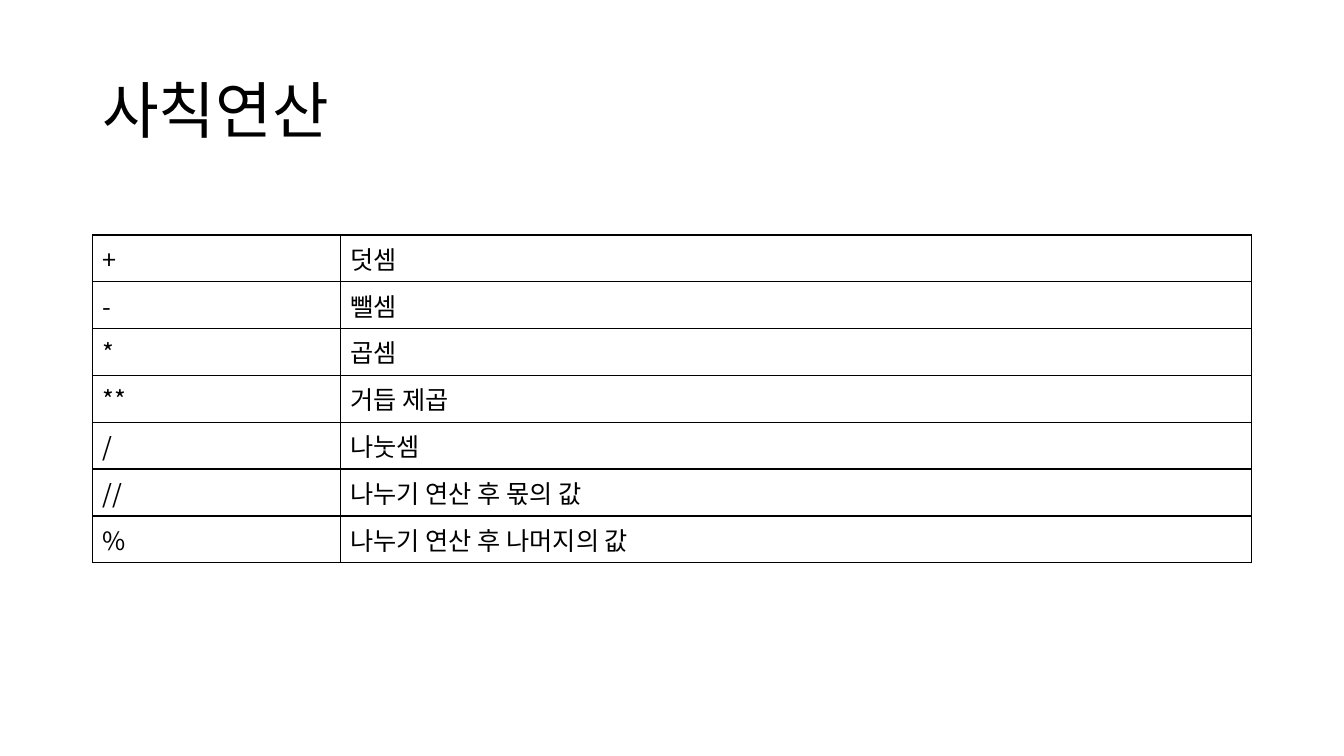
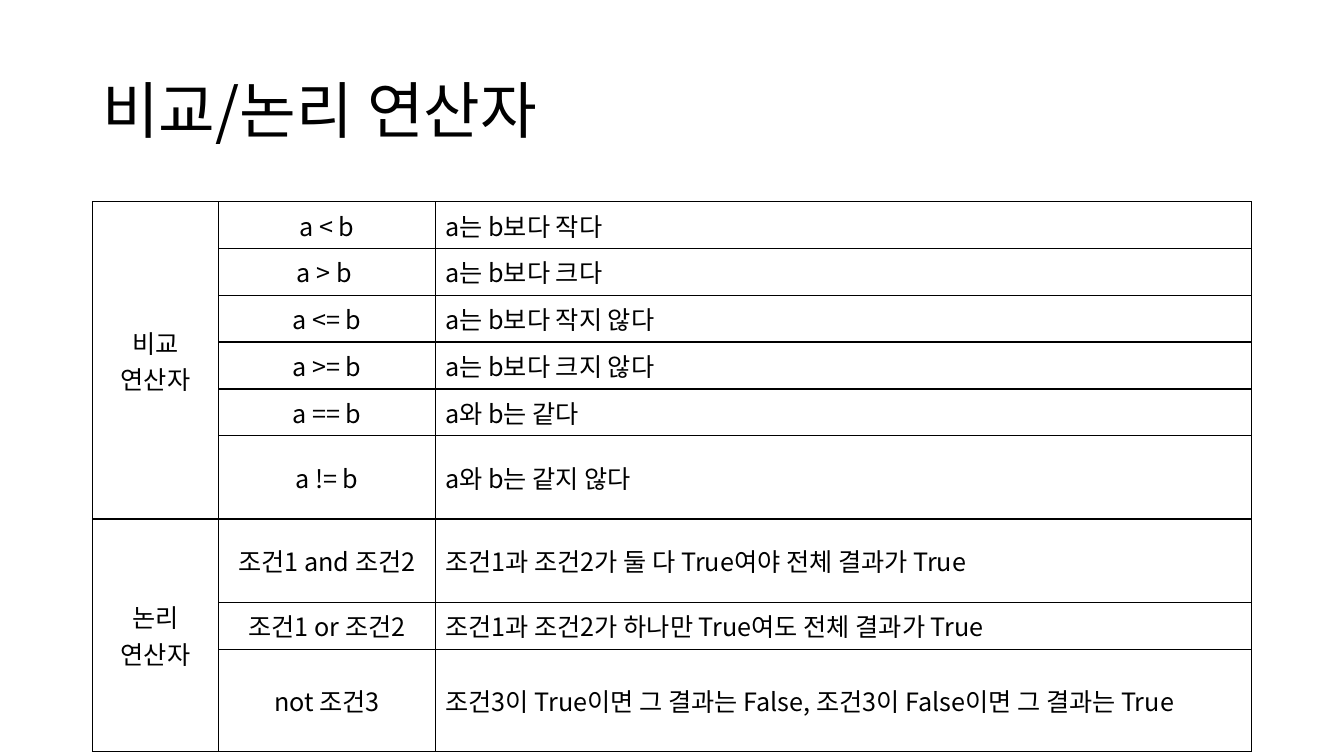
from lxml.etree import SubElement
from pptx import Presentation
from pptx.dml.color import RGBColor
from pptx.enum.text import MSO_ANCHOR as Anchor, PP_ALIGN as Align
from pptx.oxml import parse_xml
from pptx.oxml.ns import nsdecls, qn
from pptx.util import Cm, Pt

BLACK = RGBColor(0, 0, 0)
WHITE = RGBColor(255, 255, 255)
FONT = "Noto Sans CJK KR"
LEFT, WIDTH = 2.33, 29.21
ROW = 1.18

MATH = [
    ("+", "덧셈"),
    ("-", "뺄셈"),
    ("*", "곱셈"),
    ("**", "거듭 제곱"),
    ("/", "나눗셈"),
    ("//", "나누기 연산 후 몫의 값"),
    ("%", "나누기 연산 후 나머지의 값"),
]
LOGIC = [
    ("비교\n연산자", "a < b", "a는 b보다 작다"),
    ("", "a > b ", "a는 b보다 크다"),
    ("", "a <= b", "a는 b보다 작지 않다"),
    ("", "a >= b", "a는 b보다 크지 않다"),
    ("", "a == b", "a와 b는 같다"),
    ("", "a != b", "a와 b는 같지 않다"),
    ("논리\n연산자", "조건1 and 조건2", "조건1과 조건2가 둘 다 True여야 전체 결과가 True"),
    ("", "조건1 or 조건2", "조건1과 조건2가 하나만 True여도 전체 결과가 True"),
    ("", "not 조건3", "조건3이 True이면 그 결과는 False, 조건3이 False이면 그 결과는 True"),
]


def write(para, text, size):
    """Add the text run by run, with a line break at each newline."""
    for i, line in enumerate(text.split("\n")):
        if i:
            para.add_line_break()
        run = para.add_run()
        run.text = line
        font = run.font
        font.size, font.name = Pt(size), FONT
        font.color.rgb = BLACK
        SubElement(run._r.get_or_add_rPr(), qn("a:ea"), typeface=FONT)


def add_title(slide, text, left, top, width, height):
    frame = slide.shapes.add_textbox(
        Cm(left), Cm(top), Cm(width), Cm(height)).text_frame
    frame.word_wrap = True
    frame.vertical_anchor = Anchor.MIDDLE
    para = frame.paragraphs[0]
    para.line_spacing = 0.9
    write(para, text, 44)


def add_border(cell):
    props = cell._tc.get_or_add_tcPr()
    for i, side in enumerate("LRTB"):
        props.insert(i, parse_xml(
            f'<a:ln{side} {nsdecls("a")} w="{Pt(1)}"><a:solidFill>'
            f'<a:srgbClr val="{BLACK}"/></a:solidFill></a:ln{side}>'))


def add_grid(slide, data, left, top, cols, rows, anchor, aligns, spans=()):
    """Draw a ruled table; spans holds (first row, last row) of column 0."""
    table = slide.shapes.add_table(
        len(rows), len(cols), Cm(left), Cm(top),
        Cm(sum(cols)), Cm(sum(rows))).table
    table.first_row = table.horz_banding = False
    for col, width in zip(table.columns, cols):
        col.width = Cm(width)
    for row, height, texts in zip(table.rows, rows, data):
        row.height = Cm(height)
        for cell, text, align in zip(row.cells, texts, aligns):
            cell.fill.solid()
            cell.fill.fore_color.rgb = WHITE
            add_border(cell)
            cell.vertical_anchor = anchor
            para = cell.text_frame.paragraphs[0]
            para.alignment = align
            if text:
                write(para, text, 18)
    for first, last in spans:
        table.cell(first, 0).merge(table.cell(last, 0))


def add_page(deck, title):
    slide = deck.slides.add_slide(deck.slide_layouts[6])
    add_title(slide, title, LEFT, 1.01, WIDTH, 3.68)
    return slide


def main():
    deck = Presentation()
    deck.slide_width, deck.slide_height = Cm(33.87), Cm(19.05)

    add_grid(add_page(deck, "사칙연산"), MATH, LEFT, 5.92,
             [6.25, WIDTH - 6.25], [ROW] * len(MATH),
             Anchor.TOP, [Align.LEFT] * 2)

    add_grid(add_page(deck, "비교/논리 연산자"), LOGIC, LEFT, 5.08,
             [3.18, 5.46, WIDTH - 8.64],
             [ROW] * 5 + [2.1, 2.1, ROW, 2.57],
             Anchor.MIDDLE, [Align.CENTER, Align.CENTER, Align.LEFT],
             [(0, 5), (6, 8)])

    deck.save("out.pptx")


if __name__ == "__main__":
    main()
